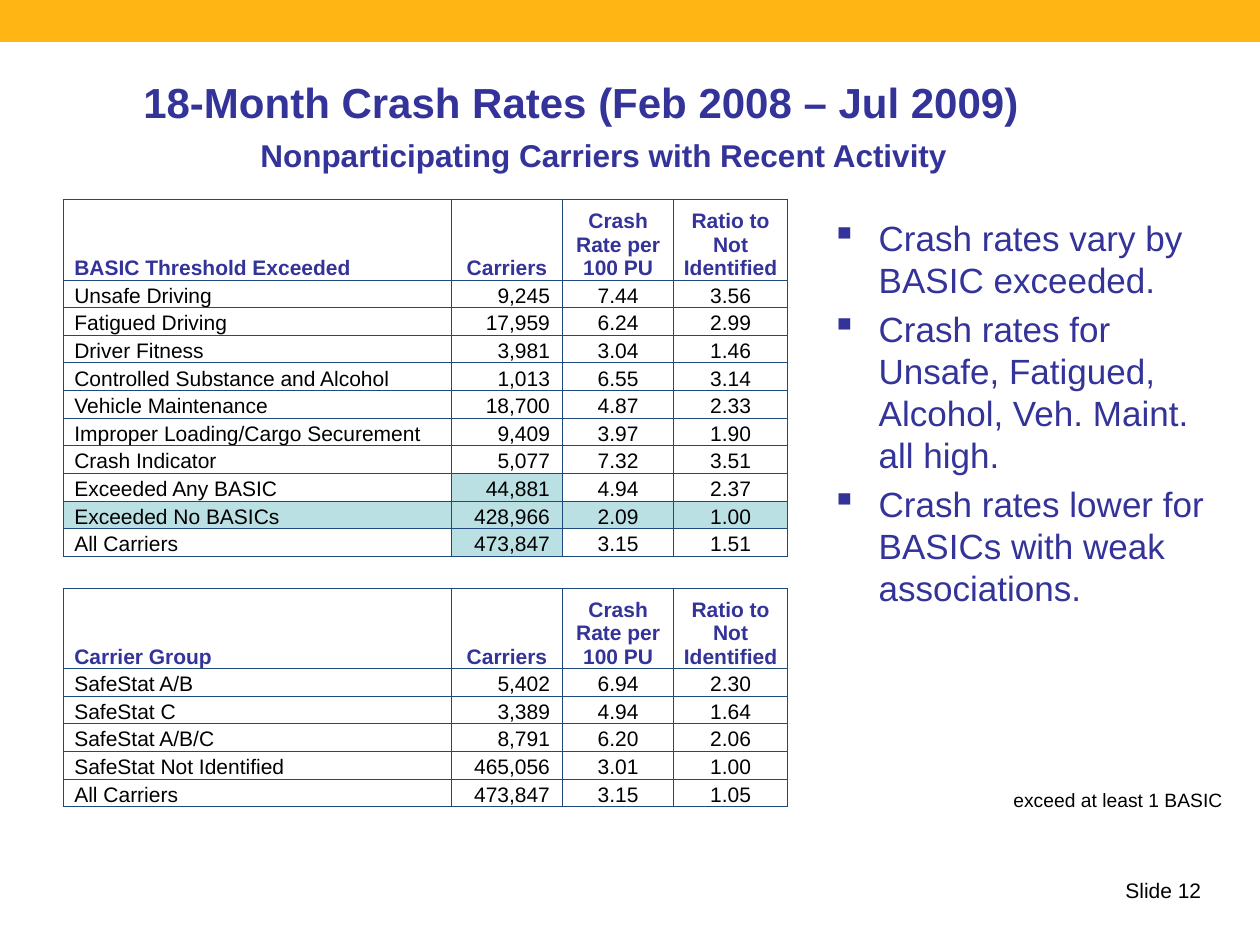
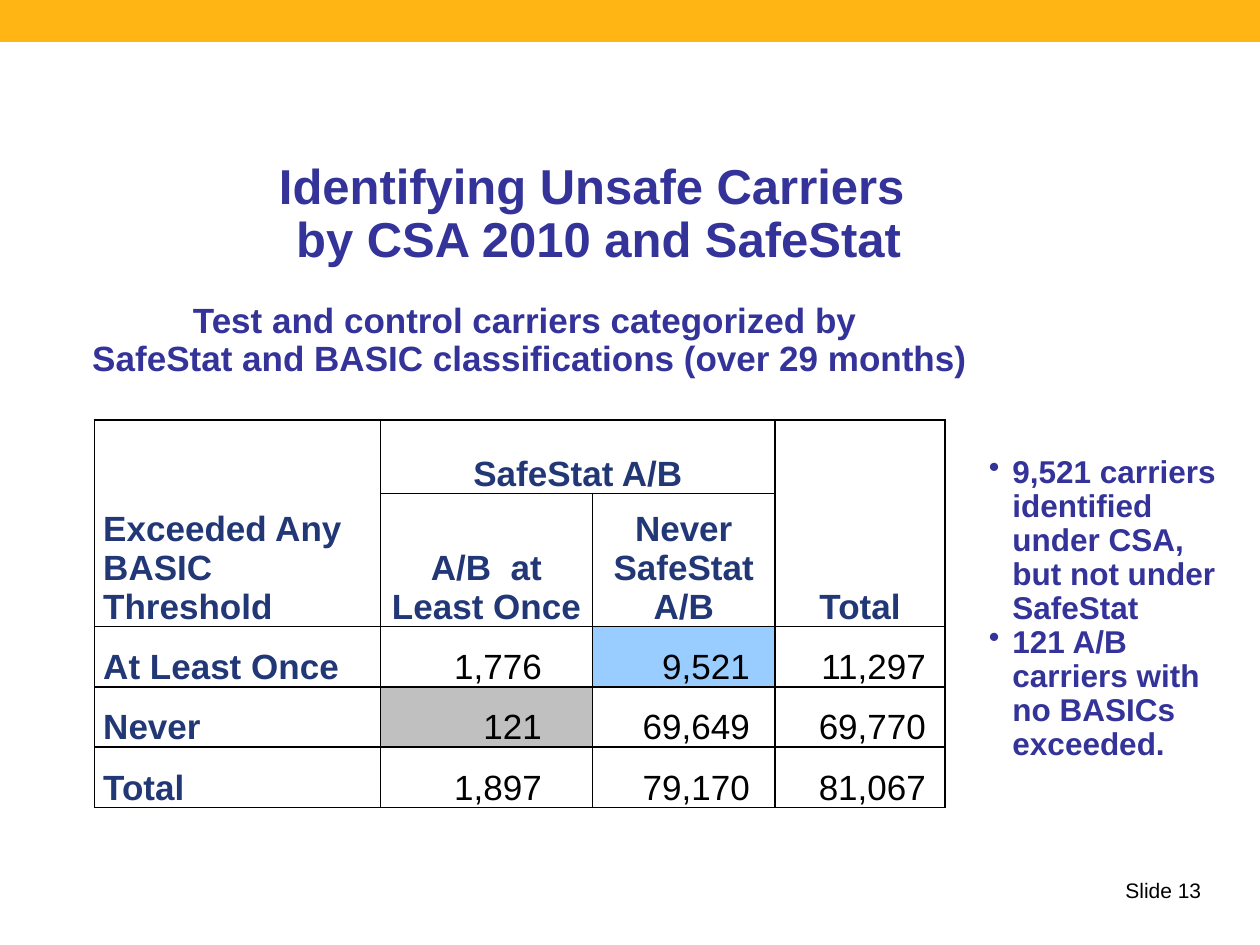
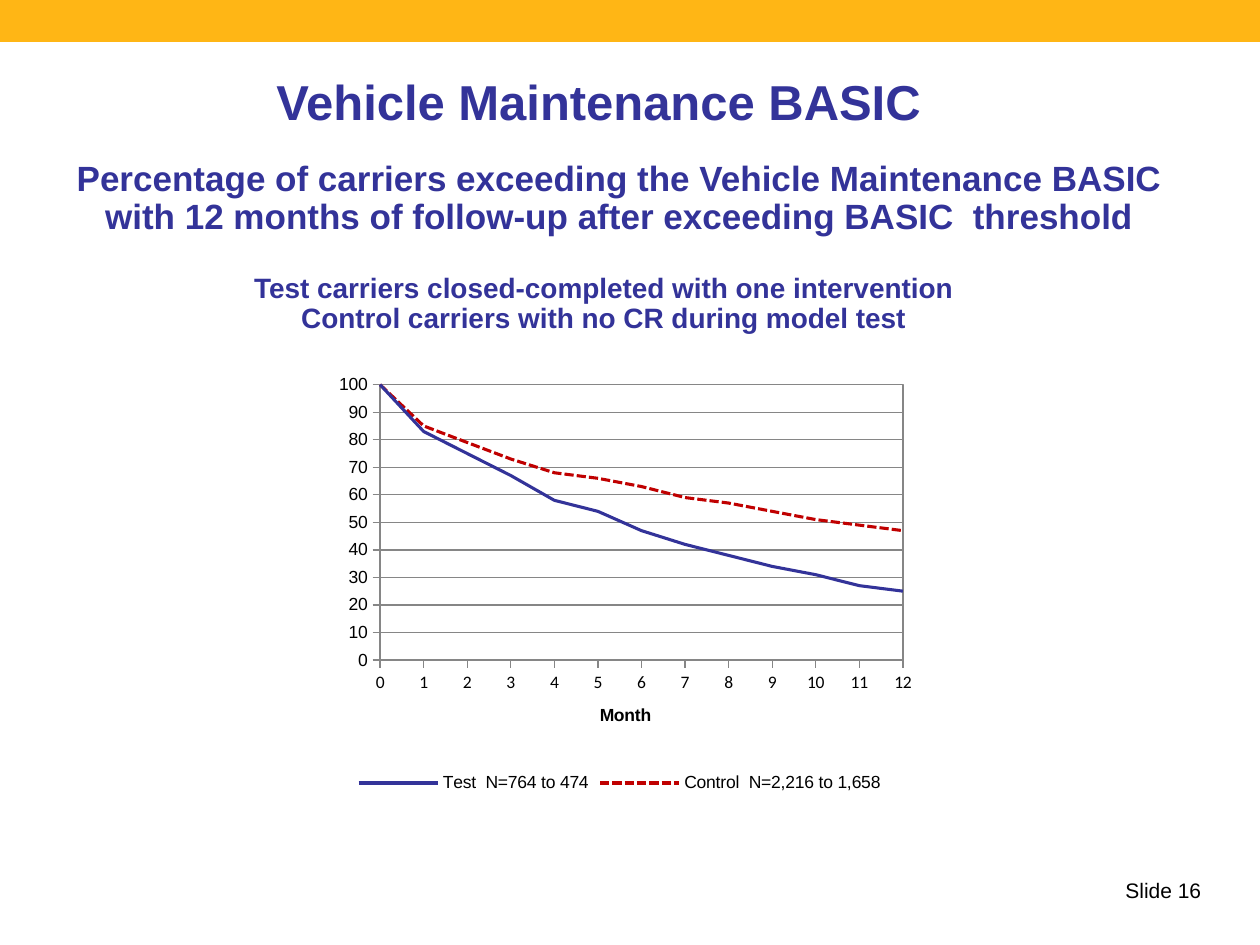
from lxml.etree import SubElement
from pptx import Presentation
from pptx.chart.data import XyChartData
from pptx.dml.color import RGBColor
from pptx.enum.chart import XL_CHART_TYPE as ChartType, XL_LEGEND_POSITION as LegendPosition
from pptx.enum.chart import XL_TICK_MARK as TickMark
from pptx.enum.dml import MSO_LINE as Dash
from pptx.enum.shapes import MSO_SHAPE as Preset
from pptx.enum.text import MSO_ANCHOR as Anchor, MSO_AUTO_SIZE as AutoSize, PP_ALIGN as Align
from pptx.oxml import parse_xml
from pptx.oxml.ns import nsdecls, qn
from pptx.util import Pt

COLORS = {
    "band": "FFB615",
    "heading": "333399",
    "body": "000000",
    "rule": "1F497D",
    "matrix_heading": "223776",
    "teal": "BBE0E3",
    "sky": "99CCFF",
    "silver": "C0C0C0",
    "test": "333399",
    "control": "C00000",
    "chart_line": "868686",
}
FONT = "Arial"
TITLE_ONLY = 5

# Text formats
BODY = {"size": 12, "color": "body", "bold": False}
HEADING = {"size": 12, "color": "heading", "bold": True}
MATRIX_BODY = {"size": 20, "color": "body", "bold": False}
MATRIX_HEADING = {"size": 20, "color": "matrix_heading", "bold": True}
CENTERED = {"alignment": Align.CENTER, "line_spacing": 0.9}


def rgb(name):
    return RGBColor.from_string(COLORS[name])


def set_all(target, values):
    for name, value in values.items():
        setattr(target, name, value)


def format_font(font, size, color, bold=False, name=FONT):
    set_all(font, {"size": Pt(size), "bold": bold, "name": name})
    font.color.rgb = rgb(color)


def write_paragraph(paragraph, text, font, layout):
    paragraph.text = text
    for line_break in paragraph._p.findall(qn("a:br")):
        SubElement(line_break, qn("a:rPr"), sz=str(font["size"] * 100))
    set_all(paragraph, layout)
    for run in paragraph.runs:
        format_font(run.font, **font)


def add_text(slide, box, text, font, layout, anchor=Anchor.MIDDLE, wrap=True):
    shape = slide.shapes.add_textbox(*map(Pt, box))
    set_all(shape.text_frame, {"word_wrap": wrap, "vertical_anchor": anchor})
    write_paragraph(shape.text_frame.paragraphs[0], text, font, layout)


def add_heading(slide, box, text, size):
    add_text(slide, box, text, {**HEADING, "size": size}, CENTERED)


def add_bullets(slide, box, items, font, character, indent, layout, gap=0, anchor=Anchor.TOP):
    frame = slide.shapes.add_textbox(*map(Pt, box)).text_frame
    set_all(frame, {"word_wrap": True, "vertical_anchor": anchor})
    for index, item in enumerate(items):
        paragraph = frame.add_paragraph() if index else frame.paragraphs[0]
        properties = paragraph._p.get_or_add_pPr()
        properties.set("marL", str(Pt(indent)))
        properties.set("indent", str(-Pt(indent)))
        SubElement(properties, qn("a:buChar"), char=character)
        spacing = {"space_before": Pt(gap)} if index else {}
        write_paragraph(paragraph, item, font, {**layout, **spacing})


def add_band(slide):
    """Draw the top band and hand it to the layout, which shows it on every slide."""
    band = slide.shapes.add_shape(Preset.RECTANGLE, 0, 0, Pt(720), Pt(24))
    band.shadow.inherit = False
    band.fill.solid()
    band.fill.fore_color.rgb = rgb("band")
    band.line.fill.background()
    slide.slide_layout.shapes.element.append(band.element)


def add_slide(presentation, number, title, box, size=28):
    slide = presentation.slides.add_slide(presentation.slide_layouts[TITLE_ONLY])
    shape = slide.shapes.title
    set_all(shape, dict(zip(("left", "top", "width", "height"), map(Pt, box))))
    set_all(shape.text_frame, {"auto_size": AutoSize.NONE, "word_wrap": True,
                               "vertical_anchor": Anchor.MIDDLE})
    write_paragraph(shape.text_frame.paragraphs[0], title, {**HEADING, "size": size}, CENTERED)
    add_text(slide, (636, 498, 60, 21.6), f"Slide {number}", BODY, {}, Anchor.TOP)
    return slide


def add_borders(cell, color, width):
    properties = cell._tc.get_or_add_tcPr()
    for side in ("lnL", "lnR", "lnT", "lnB"):
        line = SubElement(properties, qn(f"a:{side}"), w=str(Pt(width)))
        fill = SubElement(line, qn("a:solidFill"))
        SubElement(fill, qn("a:srgbClr"), val=COLORS[color])


def add_grid(slide, place, widths, heights, rows, border, style, fills, merges=()):
    """style(row, column) gives the font, alignment, left and right margins, space after."""
    box = (*place, sum(widths), sum(heights))
    table = slide.shapes.add_table(len(heights), len(widths), *map(Pt, box)).table
    set_all(table, {"first_row": False, "horz_banding": False})
    for column, width in zip(table.columns, widths):
        column.width = Pt(width)
    for row, height in zip(table.rows, heights):
        row.height = Pt(height)
    for r, texts in enumerate(rows):
        for c, text in enumerate(texts):
            cell = table.cell(r, c)
            font, alignment, left, right, after = style(r, c)
            set_all(cell, {"vertical_anchor": Anchor.BOTTOM, "margin_left": Pt(left),
                           "margin_right": Pt(right), "margin_top": 0, "margin_bottom": 0})
            add_borders(cell, *border)
            if (r, c) in fills:
                cell.fill.solid()
                cell.fill.fore_color.rgb = rgb(fills[r, c])
            else:
                cell.fill.background()
            if text:
                write_paragraph(cell.text_frame.paragraphs[0], text, font,
                                {"alignment": alignment, "space_after": Pt(after)})
    for first, last in merges:
        table.cell(*first).merge(table.cell(*last))


def rate_style(row, column):
    font = BODY if row else HEADING
    if column == 0:
        return font, Align.LEFT, 6.5, 0.7, 0
    if column == 1 and row:
        return font, Align.RIGHT, 0.7, 7.2, 0
    return font, Align.CENTER, 0.7, 0.7, 0


def matrix_style(row, column):
    if column == 0:
        return MATRIX_HEADING, Align.LEFT, 5, 5, 3
    if row < 2:
        return MATRIX_HEADING, Align.CENTER, 5, 5, 3
    return MATRIX_BODY, Align.RIGHT, 5, (28.8, 14.4, 10.8)[column - 1], 3


def add_rate_table(slide, top, label, rows, fills):
    header = (label, "Carriers", "Crash Rate per 100 PU", "Ratio to Not Identified")
    heights = [46] + [15.8] * len(rows)
    add_grid(slide, (36, top), (222, 63.5, 63.5, 65), heights, [header, *rows],
             ("rule", 0.5), rate_style, fills)


def format_line(line, color, width):
    line.color.rgb = rgb(color)
    line.width = Pt(width)


def format_axis(axis, maximum, step, font_name):
    set_all(axis, {"minimum_scale": 0, "maximum_scale": maximum, "major_unit": step,
                   "major_tick_mark": TickMark.OUTSIDE, "minor_tick_mark": TickMark.NONE})
    set_all(axis.tick_labels, {"number_format": "0", "number_format_is_linked": False})
    format_font(axis.tick_labels.font, 10, "body", name=font_name)
    format_line(axis.format.line, "chart_line", 0.75)


def frame_plot(chart, x, y, width, height):
    plot_area = chart.element.find(".//" + qn("c:plotArea"))
    for layout in plot_area.findall(qn("c:layout")):
        plot_area.remove(layout)
    layout = parse_xml(f"<c:layout {nsdecls('c')}><c:manualLayout/></c:layout>")
    plot_area.insert(0, layout)
    settings = {"layoutTarget": "inner", "xMode": "edge", "yMode": "edge",
                "x": x, "y": y, "w": width, "h": height}
    for name, value in settings.items():
        SubElement(layout[0], qn(f"c:{name}"), val=str(value))
    plot_area.append(parse_xml(
        f'<c:spPr {nsdecls("c", "a")}><a:noFill/><a:ln w="{Pt(0.75)}"><a:solidFill>'
        f'<a:srgbClr val="{COLORS["chart_line"]}"/></a:solidFill></a:ln></c:spPr>'))


def add_decline_chart(slide, box, groups):
    data = XyChartData()
    for name, values, _, _ in groups:
        series = data.add_series(name)
        for month, value in enumerate(values):
            series.add_data_point(month, value)
    chart = slide.shapes.add_chart(ChartType.XY_SCATTER_SMOOTH_NO_MARKERS,
                                   *map(Pt, box), data).chart
    set_all(chart, {"has_title": False, "has_legend": True})
    format_font(chart.font, 10, "body")
    set_all(chart.legend, {"position": LegendPosition.BOTTOM, "include_in_layout": False})
    format_font(chart.legend.font, 10, "body")
    chart.plots[0].vary_by_categories = False

    # Axes
    months, percent = chart.category_axis, chart.value_axis
    format_axis(months, 12, 1, "Calibri")
    format_axis(percent, 100, 10, FONT)
    months.has_major_gridlines = False
    percent.has_major_gridlines = True
    format_line(percent.major_gridlines.format.line, "chart_line", 0.75)
    write_paragraph(months.axis_title.text_frame.paragraphs[0], "Month",
                    {"size": 10, "color": "body", "bold": True}, {})

    # Curves
    for series, (_, _, color, dash) in zip(chart.plots[0].series, groups):
        series.smooth = True
        format_line(series.format.line, color, 1.75)
        series.format.line.dash_style = dash
    frame_plot(chart, 0.12, 0.04, 0.83, 0.64)


def build_crash_rates(presentation):
    slide = add_slide(presentation, 12, "18-Month Crash Rates (Feb 2008 – Jul 2009)",
                      (44, 36, 576, 48), 24)
    add_band(slide)
    add_heading(slide, (75, 72, 540, 36), "Nonparticipating Carriers with Recent Activity", 18)
    basics = [
        ("Unsafe Driving", "9,245", "7.44", "3.56"),
        ("Fatigued Driving", "17,959", "6.24", "2.99"),
        ("Driver Fitness", "3,981", "3.04", "1.46"),
        ("Controlled Substance and Alcohol", "1,013", "6.55", "3.14"),
        ("Vehicle Maintenance", "18,700", "4.87", "2.33"),
        ("Improper Loading/Cargo Securement", "9,409", "3.97", "1.90"),
        ("Crash Indicator", "5,077", "7.32", "3.51"),
        ("Exceeded Any BASIC", "44,881", "4.94", "2.37"),
        ("Exceeded No BASICs", "428,966", "2.09", "1.00"),
        ("All Carriers", "473,847", "3.15", "1.51"),
    ]
    highlighted = [(8, 1), *((9, column) for column in range(4)), (10, 1)]
    add_rate_table(slide, 114, "BASIC Threshold Exceeded", basics,
                   dict.fromkeys(highlighted, "teal"))
    groups = [
        ("SafeStat A/B", "5,402", "6.94", "2.30"),
        ("SafeStat C", "3,389", "4.94", "1.64"),
        ("SafeStat A/B/C", "8,791", "6.20", "2.06"),
        ("SafeStat Not Identified", "465,056", "3.01", "1.00"),
        ("All Carriers", "473,847", "3.15", "1.05"),
    ]
    add_rate_table(slide, 336, "Carrier Group", groups, {})
    findings = [
        "Crash rates vary by BASIC exceeded.",
        "Crash rates for Unsafe, Fatigued, Alcohol, Veh. Maint. all high.",
        "Crash rates lower for BASICs with weak associations.",
    ]
    add_bullets(slide, (468, 120, 240, 330), findings, {"size": 20, "color": "heading"},
                "▪", 27, {}, gap=4)
    add_text(slide, (572, 447, 136, 21), "exceed at least 1 BASIC", {**BODY, "size": 11}, {},
             Anchor.TOP, wrap=False)


def build_identification(presentation):
    slide = add_slide(presentation, 13, "Identifying Unsafe Carriers \vby CSA 2010 and SafeStat",
                      (36, 90, 612, 66))
    rows = [
        ("Exceeded Any BASIC Threshold", "SafeStat A/B", "", "Total"),
        ("", "A/B  at Least Once", "Never SafeStat A/B", ""),
        ("At Least Once", "1,776", "9,521", "11,297"),
        ("Never", "121", "69,649", "69,770"),
        ("Total", "1,897", "79,170", "81,067"),
    ]
    add_grid(slide, (54, 240), (163.5, 121, 104.5, 97), [42, 76] + [34.5] * 3, rows,
             ("body", 1), matrix_style, {(2, 2): "sky", (3, 1): "silver"},
             merges=[((0, 0), (1, 0)), ((0, 1), (0, 2)), ((0, 3), (1, 3))])
    add_heading(slide, (30, 162, 540, 66), "Test and control carriers categorized by\v"
                " SafeStat and BASIC classifications (over 29 months)", 20)
    findings = [
        "9,521 carriers identified under CSA, but not under SafeStat",
        "121 A/B carriers with no BASICs exceeded.",
    ]
    add_bullets(slide, (558, 240, 144, 216), findings, {**HEADING, "size": 18}, "•", 13.5,
                {"line_spacing": 0.9}, anchor=Anchor.MIDDLE)


def build_maintenance(presentation):
    slide = add_slide(presentation, 16, "Vehicle Maintenance BASIC", (36, 30, 612, 60))
    add_heading(slide, (30, 84, 648, 60), "Percentage of carriers exceeding the Vehicle "
                "Maintenance BASIC with 12 months of follow-up after exceeding BASIC  threshold", 20)
    add_heading(slide, (66, 144, 558, 60), "Test carriers closed-completed with one intervention\v"
                "Control carriers with no CR during model test", 16)
    add_decline_chart(slide, (174, 210, 360, 246), [
        ("Test  N=764 to 474", (100, 83, 75, 67, 58, 54, 47, 42, 38, 34, 31, 27, 25),
         "test", Dash.SOLID),
        ("Control  N=2,216 to 1,658", (100, 85, 79, 73, 68, 66, 63, 59, 57, 54, 51, 49, 47),
         "control", Dash.SQUARE_DOT),
    ])


def main():
    presentation = Presentation()
    set_all(presentation, {"slide_width": Pt(720), "slide_height": Pt(540)})
    build_crash_rates(presentation)
    build_identification(presentation)
    build_maintenance(presentation)
    presentation.save("out.pptx")


if __name__ == "__main__":
    main()
